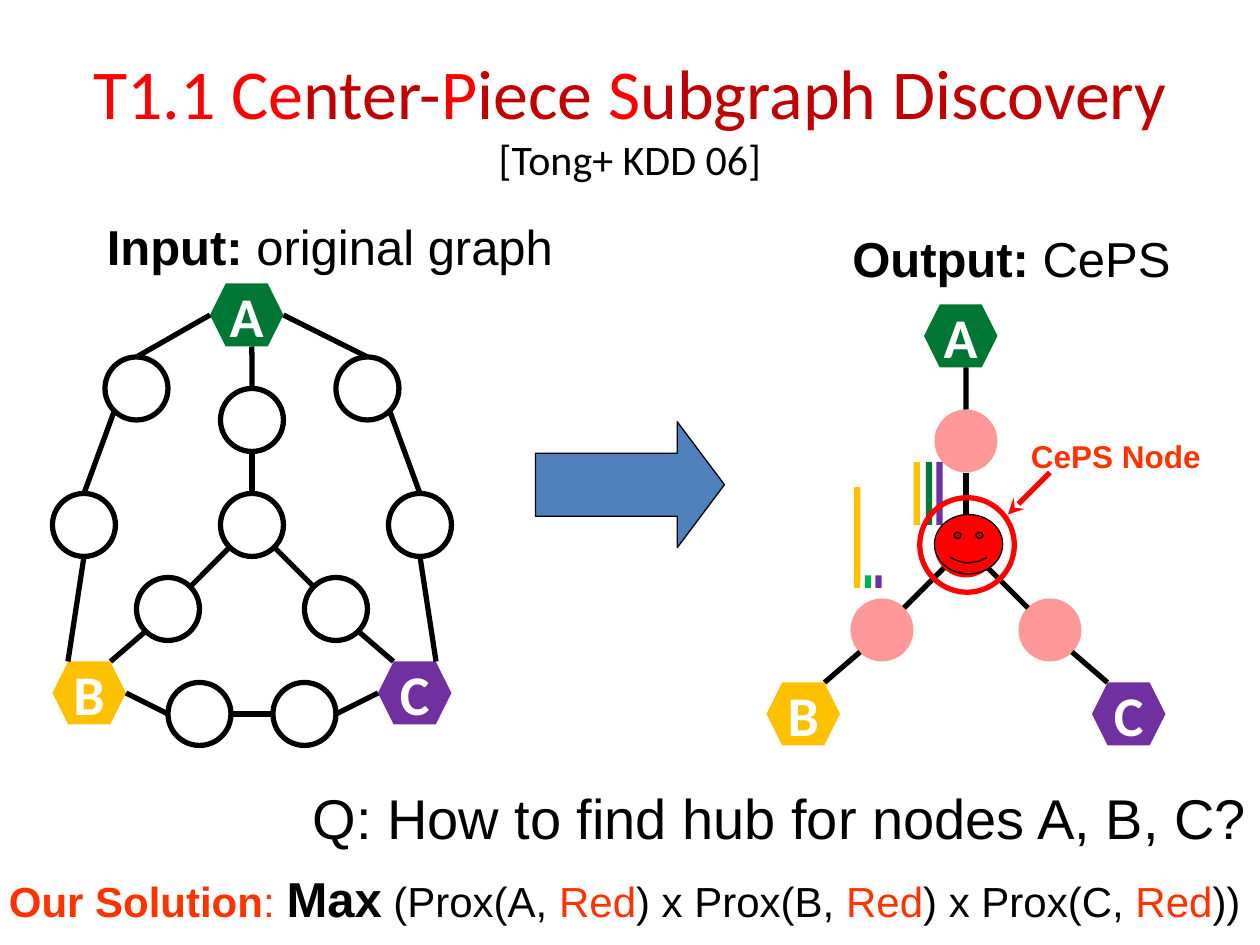
from dataclasses import dataclass

from pptx import Presentation
from pptx.dml.color import RGBColor
from pptx.enum.shapes import MSO_CONNECTOR as Link, MSO_SHAPE as Kind
from pptx.enum.text import MSO_ANCHOR as Anchor, PP_ALIGN as Align
from pptx.oxml.ns import qn
from pptx.util import Pt
from lxml.etree import SubElement


@dataclass(frozen=True)
class Theme:
    black: str = "000000"
    white: str = "FFFFFF"
    red: str = "FF0000"
    dark: str = "C00000"
    orange: str = "FF3300"
    gold: str = "FFC000"
    green: str = "007635"
    lime: str = "00B050"
    purple: str = "7030A0"
    blue: str = "4F81BD"
    head: str = "Calibri"
    body: str = "Arial"
    title: int = 40
    large: int = 32
    label: int = 28
    text: int = 24
    note: int = 18
    thick: float = 3
    thin: float = 0.75


T = Theme()
NODE, HEX = (36, 36), (42, 36)  # node sizes

# Places where edges meet a node, as fractions of its box
ROUND = {"n": (0.5, 0), "s": (0.5, 1), "w": (0, 0.5), "e": (1, 0.5),
         "nw": (0.15, 0.15), "ne": (0.85, 0.15),
         "sw": (0.15, 0.85), "se": (0.85, 0.85)}
SIX = {"nw": (0.21, 0), "ne": (0.79, 0), "w": (0, 0.5), "e": (1, 0.5),
       "s": (0.57, 1)}

# Nodes and edges, relative to the graph's corner
ENDS = {"A": (90, 0, T.green), "B": (0, 216, T.gold), "C": (186, 216, T.purple)}
CORE = {"hub": (96, 120), "top": (96, 60), "right": (144, 168), "left": (48, 168)}
RING = {"west": (0, 120), "nw": (30, 42), "base1": (66, 228),
        "base2": (126, 228), "east": (192, 120), "ne": (162, 42)}
SPOKES = ["A s top n", "top s hub n", "hub se right nw", "right se C nw",
          "hub sw left ne", "left sw B ne"]
RIM = ["B e base1 w", "base1 e base2 w", "base2 e C w",
       "A w nw n", "nw sw west n", "west s B nw",
       "A e ne n", "ne se east n", "east s C ne"]


def rgb(code):
    return RGBColor.from_string(code)


def write(frame, runs, size=T.text, font=T.body, color=T.black, bold=False,
          align=Align.LEFT, anchor=Anchor.TOP, wrap=True, inset=None):
    """Write runs of (text, changes) as one paragraph."""
    frame.word_wrap, frame.vertical_anchor = wrap, anchor
    if inset is not None:
        side, edge = inset
        frame.margin_left = frame.margin_right = Pt(side)
        frame.margin_top = frame.margin_bottom = Pt(edge)
    para = frame.paragraphs[0]
    para.alignment = align
    for text, change in runs:
        run = para.add_run()
        run.text = text
        run.font.name = font
        run.font.size = Pt(change.get("size", size))
        run.font.bold = change.get("bold", bold)
        run.font.color.rgb = rgb(change.get("color", color))


def draw(group, kind, x, y, w, h, fill=None, line=None, width=T.thick, alpha=None):
    shape = group.shapes.add_shape(kind, Pt(x), Pt(y), Pt(w), Pt(h))
    shape.shadow.inherit = False
    if fill:
        shape.fill.solid()
        shape.fill.fore_color.rgb = rgb(fill)
    else:
        shape.fill.background()
    if alpha:
        tone = shape._element.spPr.find(qn("a:solidFill"))[0]
        SubElement(tone, qn("a:alpha")).set("val", str(alpha * 1000))
    if line:
        shape.line.color.rgb = rgb(line)
        shape.line.width = Pt(width)
    else:
        shape.line.fill.background()
    return shape


def join(group, start, end, color=T.black, head=False):
    wire = group.shapes.add_connector(Link.STRAIGHT, *map(Pt, start + end))
    wire.line.color.rgb = rgb(color)
    wire.line.width = Pt(T.thick)
    if head:
        SubElement(wire.line._get_or_add_ln(), qn("a:tailEnd")).set("type", "stealth")
    SubElement(wire._element.spPr, qn("a:effectLst"))


def label(slide, x, y, w, h, runs, **style):
    box = slide.shapes.add_textbox(Pt(x), Pt(y), Pt(w), Pt(h))
    write(box.text_frame, runs, **style)


def graph(slide, x, y, nodes, edges, look):
    """Draw end nodes, round nodes and the edges between them."""
    group = slide.shapes.add_group_shape()
    for name, (dx, dy, color) in ENDS.items():
        shape = draw(group, Kind.HEXAGON, x + dx, y + dy, *HEX, fill=color)
        write(shape.text_frame, [(name, {})], size=T.large, font=T.head,
              color=T.white, bold=True, align=Align.CENTER,
              anchor=Anchor.MIDDLE, inset=(0, 0))
    for name, (dx, dy) in nodes.items():
        draw(group, Kind.OVAL, x + dx, y + dy, *NODE, **look(name))

    def port(name, side):
        (dx, dy), (w, h), sites = ((ENDS[name][:2], HEX, SIX) if name in ENDS
                                   else (nodes[name], NODE, ROUND))
        fx, fy = sites[side]
        return x + dx + fx * w, y + dy + fy * h

    for edge in edges:
        one, out, two, into = edge.split()
        join(group, port(one, out), port(two, into))


def heading(slide, x, y, w, h):
    title = slide.shapes.title
    title.left, title.top, title.width, title.height = map(Pt, (x, y, w, h))
    red, dark = {"color": T.red}, {"color": T.dark}
    write(title.text_frame,
          [("T1.1 Ce", red), ("nter-", dark), ("P", red), ("iece ", dark),
           ("S", red), ("ubgraph Discovery ", dark),
           ("[Tong+ KDD 06]", {"size": T.text})],
          size=T.title, font=T.head, align=Align.CENTER, anchor=Anchor.MIDDLE)


def source(slide, x, y):
    label(slide, x + 24, y - 42, 366, 41,
          [("Input: ", {"bold": True}), ("original graph", {})], size=T.label)
    graph(slide, x, y, CORE | RING, SPOKES + RIM, lambda name: {"line": T.black})


def result(slide, x, y):
    label(slide, x + 42, y - 47, 240, 41,
          [("Output: ", {"bold": True}), ("CePS", {})], size=T.label)
    graph(slide, x, y, CORE, SPOKES,
          lambda name: {"fill": T.red, "alpha": None if name == "hub" else 40})
    # Score bars: left, bottom, then (offset, height, colour)
    bars = slide.shapes.add_group_shape()
    for left, base, scores in (
            (50, 162, ((0, 57.6, T.gold), (6.2, 7.2, T.lime), (12.2, 7.2, T.purple))),
            (84, 126, ((0, 36, T.gold), (7, 36, T.green), (13, 36, T.purple)))):
        for dx, tall, color in scores:
            draw(bars, Kind.RECTANGLE, x + left + dx, y + base - tall, 3.6, tall,
                 fill=color)
    # Hub mark and callout
    draw(slide, Kind.OVAL, x + 87.6, y + 110.4, 54, 54, line=T.red)
    join(slide, (x + 162, y + 96), (x + 138, y + 120), color=T.red, head=True)
    label(slide, x + 144, y + 72, 112, 29, [("CePS Node", {})],
          size=T.note, color=T.orange, bold=True, wrap=False)
    face = draw(slide, Kind.SMILEY_FACE, x + 96, y + 120, 39, 34,
                fill=T.red, line=T.black, width=T.thin)
    face.adjustments[0] = 0.047


def arrow(slide, x, y, w, h):
    shape = draw(slide, Kind.RIGHT_ARROW, x, y, w, h, fill=T.blue,
                 line=T.black, width=T.thin)
    shape.adjustments[1] = 0.375


def answer(slide, x, y, w):
    ask = draw(slide, Kind.RECTANGLE, x + 144, y, w - 144, 46, fill=T.white)
    write(ask.text_frame, [("Q: How to find hub for nodes A, B, C?", {})],
          size=T.large, align=Align.RIGHT)
    mark = {"color": T.orange}
    runs = [("Our Solution", mark | {"bold": True}), (": ", mark),
            ("Max", {"size": T.label, "bold": True})]
    for lead, name in zip((" (", ") x ", ") x "), "ABC"):
        runs += [(f"{lead}Prox({name}, ", {}), ("Red", mark)]
    reply = draw(slide, Kind.RECTANGLE, x, y + 49, w - 6, 41, fill=T.white)
    write(reply.text_frame, runs + [("))", {})], align=Align.CENTER, inset=(0, 3.6))


def main():
    deck = Presentation()
    deck.slide_width, deck.slide_height = Pt(720), Pt(540)
    slide = deck.slides.add_slide(deck.slide_layouts[5])
    heading(slide, 36, 21.6, 648, 90)
    arrow(slide, 306, 241, 108, 72)
    answer(slide, 0, 444, 720)
    source(slide, 30, 162)
    result(slide, 438, 174)
    deck.save("out.pptx")


if __name__ == "__main__":
    main()
